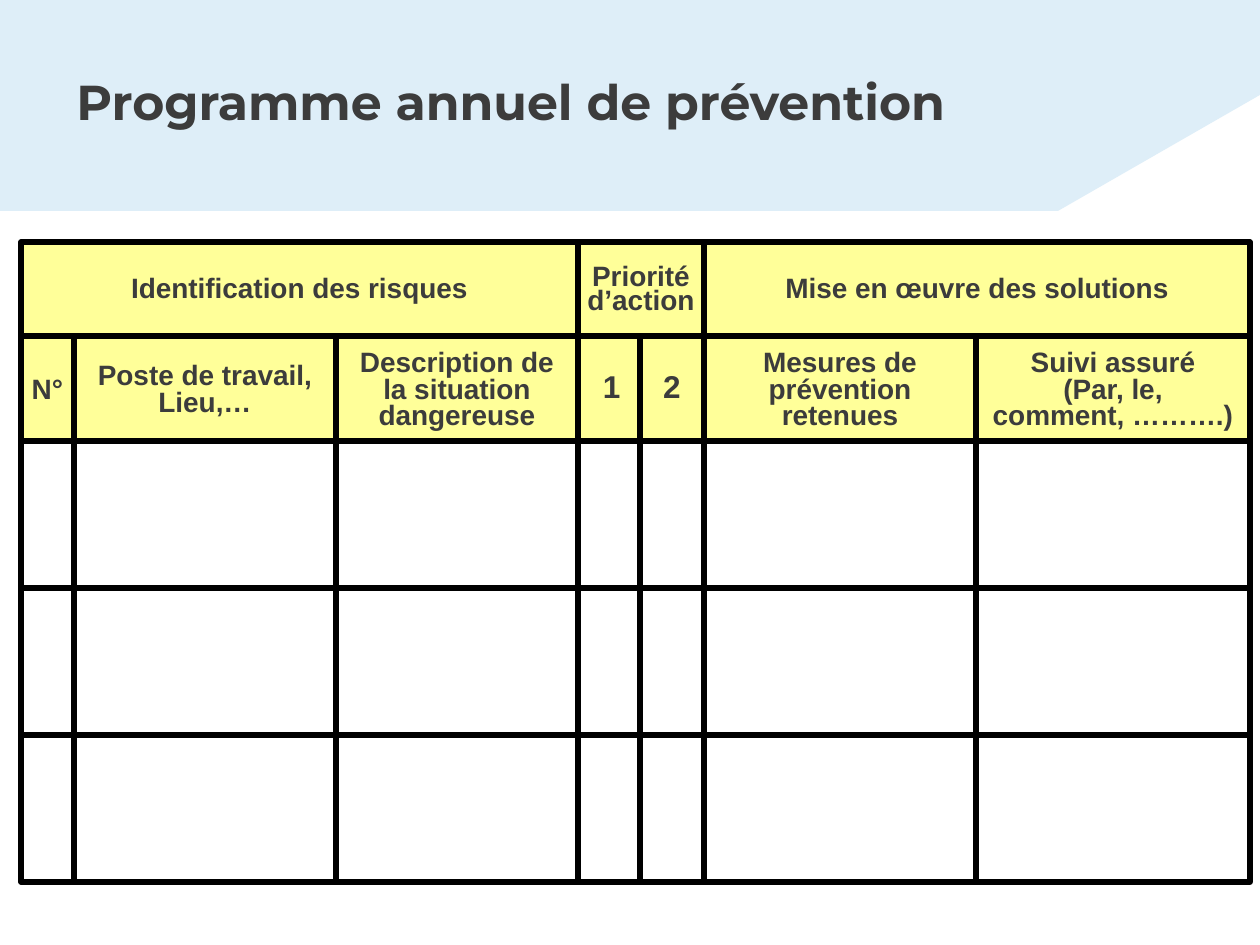
from dataclasses import dataclass
from itertools import pairwise, product

from pptx import Presentation
from pptx.dml.color import RGBColor
from pptx.enum.shapes import MSO_SHAPE as ShapeType
from pptx.enum.text import MSO_ANCHOR as Anchor, MSO_AUTO_SIZE as AutoSize, PP_ALIGN as Align
from pptx.util import Emu, Pt

PALE_BLUE = RGBColor(0xDE, 0xEE, 0xF8)
YELLOW = RGBColor(0xFF, 0xFF, 0x99)
WHITE = RGBColor(0xFF, 0xFF, 0xFF)
BLACK = RGBColor(0x00, 0x00, 0x00)
DARK_GREY = RGBColor(0x3C, 0x3C, 0x3C)

EMU_PER_PX = 914400 / 126
COLUMN_EDGES = [21, 74, 336, 578, 640, 704, 976, 1250]
ROW_EDGES = [242, 336, 441, 588, 735, 882]
HEADER_ROWS = 2
FIRST_PRIORITY = 3
PRIORITY_OVERLAP = 5  # the first priority column reaches under the second


@dataclass(frozen=True)
class Heading:
    row: int
    column: int
    lines: tuple[str, ...]
    spacing: float = 0.8
    size: int = 16
    span: int = 1


HEADINGS = [
    Heading(0, 0, ("Identification des risques",), 0.7, span=3),
    Heading(0, 3, ("Priorité d’action",), 0.7, span=2),
    Heading(0, 5, ("Mise en œuvre des solutions",), 0.7, span=2),
    Heading(1, 0, ("N°",)),
    Heading(1, 1, ("Poste de travail,", "Lieu,…")),
    Heading(1, 2, ("Description de", "la situation dangereuse")),
    Heading(1, 3, ("1",), 0.7, 18),
    Heading(1, 4, ("2",), 0.7, 18),
    Heading(1, 5, ("Mesures de prévention", "retenues")),
    Heading(1, 6, ("Suivi assuré", "(Par, le,", "comment, ……….)")),
]


def px(length: int) -> Emu:
    return Emu(round(length * EMU_PER_PX))


def style_font(font, name: str, size: int) -> None:
    font.name = name
    font.size = Pt(size)
    font.bold = True
    font.color.rgb = DARK_GREY


def add_banner(slide) -> None:
    builder = slide.shapes.build_freeform(0, 0, scale=EMU_PER_PX)
    builder.add_line_segments([(0, 211), (1058, 211), (1260, 95), (1260, 0)])
    banner = builder.convert_to_shape()
    banner.fill.solid()
    banner.fill.fore_color.rgb = PALE_BLUE
    banner.line.fill.background()
    banner.shadow.inherit = False


def add_title(slide, text: str) -> None:
    frame = slide.shapes.add_textbox(px(64), px(65), px(1142), px(72)).text_frame
    frame.word_wrap = True
    frame.auto_size = AutoSize.SHAPE_TO_FIT_TEXT
    paragraph = frame.paragraphs[0]
    paragraph.text = text
    style_font(paragraph.font, "Montserrat", 28)


def add_box(shapes, row: int, column: int, span: int, color: RGBColor):
    left, right = COLUMN_EDGES[column], COLUMN_EDGES[column + span]
    top, bottom = ROW_EDGES[row], ROW_EDGES[row + 1]
    if column == FIRST_PRIORITY and span == 1:
        right += PRIORITY_OVERLAP
    box = shapes.add_shape(
        ShapeType.RECTANGLE, px(left), px(top), px(right - left), px(bottom - top)
    )
    box.fill.solid()
    box.fill.fore_color.rgb = color
    box.line.color.rgb = BLACK
    box.line.width = Pt(3)
    box.shadow.inherit = False
    return box


def add_heading(shapes, heading: Heading) -> None:
    box = add_box(shapes, heading.row, heading.column, heading.span, YELLOW)
    frame = box.text_frame
    frame.word_wrap = True
    frame.vertical_anchor = Anchor.MIDDLE
    frame.margin_left = frame.margin_right = 0
    frame.margin_top, frame.margin_bottom = px(10), px(5)
    frame.text = "\n".join(heading.lines)
    for paragraph in frame.paragraphs:
        paragraph.alignment = Align.CENTER
        paragraph.line_spacing = heading.spacing
        style_font(paragraph.font, "Arial", heading.size)


def add_programme_grid(slide) -> None:
    shapes = slide.shapes.add_group_shape().shapes
    for heading in HEADINGS:
        add_heading(shapes, heading)
    # Empty boxes to fill in
    body_rows = range(HEADER_ROWS, len(ROW_EDGES) - 1)
    for column, row in product(range(len(COLUMN_EDGES) - 1), body_rows):
        add_box(shapes, row, column, 1, WHITE)


def main() -> None:
    presentation = Presentation()
    presentation.slide_width, presentation.slide_height = px(1260), px(945)
    slide = presentation.slides.add_slide(presentation.slide_layouts[6])
    add_banner(slide)
    add_programme_grid(slide)
    add_title(slide, "Programme annuel de prévention")
    presentation.save("out.pptx")


if __name__ == "__main__":
    main()
